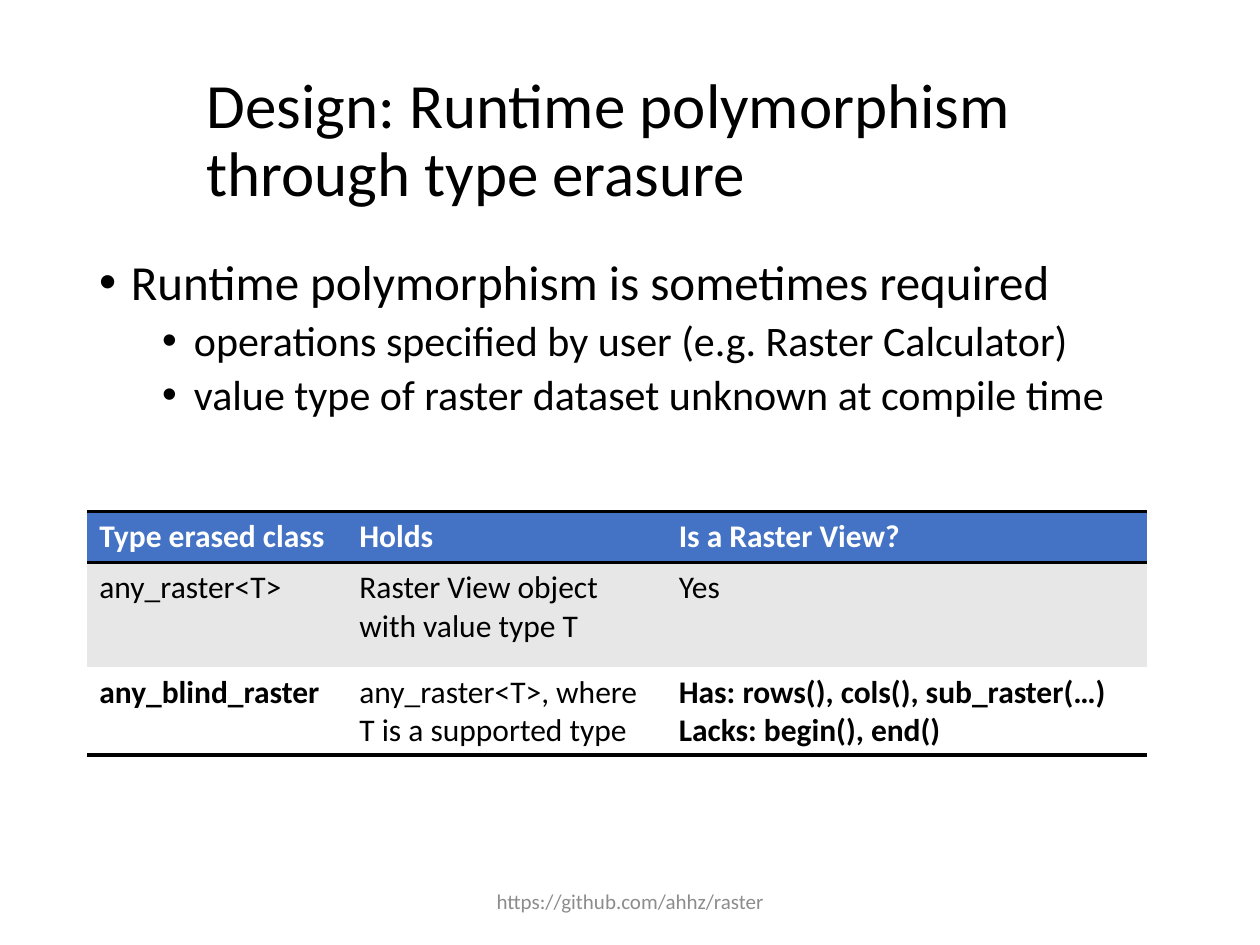
from lxml.etree import SubElement
from pptx import Presentation
from pptx.dml.color import RGBColor
from pptx.enum.text import MSO_ANCHOR, PP_ALIGN
from pptx.oxml import parse_xml
from pptx.oxml.ns import nsdecls, qn
from pptx.util import Cm, Pt

BLACK = RGBColor(0x00, 0x00, 0x00)
WHITE = RGBColor(0xFF, 0xFF, 0xFF)
BLUE = RGBColor(0x44, 0x72, 0xC4)
BAND = RGBColor(0xE7, 0xE7, 0xE7)
GRAY = RGBColor(0x8C, 0x8C, 0x8C)


class SlideBuilder:
    font_name = "Calibri"
    rule_width = Pt(2)

    def __init__(self, slide):
        self.slide = slide

    def style(self, paragraph, size, color=BLACK, bold=False):
        font = paragraph.font
        font.name = self.font_name
        font.size = Pt(size)
        font.bold = bold
        font.color.rgb = color

    def text_frame(self, left, top, width, height, anchor):
        shape = self.slide.shapes.add_textbox(Cm(left), Cm(top), Cm(width), Cm(height))
        frame = shape.text_frame
        frame.word_wrap = True
        frame.vertical_anchor = anchor
        return frame

    def text(self, text, box, size, color=BLACK, align=PP_ALIGN.LEFT, line_spacing=1.0):
        paragraph = self.text_frame(*box, MSO_ANCHOR.MIDDLE).paragraphs[0]
        paragraph.text = text
        paragraph.alignment = align
        paragraph.line_spacing = line_spacing
        self.style(paragraph, size, color)

    def bullets(self, items, box):
        frame = self.text_frame(*box, MSO_ANCHOR.TOP)
        for index, (level, text) in enumerate(items):
            paragraph = frame.paragraphs[0] if index == 0 else frame.add_paragraph()
            paragraph.text = text
            paragraph.level = level
            paragraph.line_spacing = 0.9
            paragraph.space_before = Pt(5 if index else 0)
            properties = paragraph._p.get_or_add_pPr()
            properties.set("marL", str(Cm(0.64 + 1.27 * level)))
            properties.set("indent", str(Cm(-0.64)))
            SubElement(properties, qn("a:buFont"), typeface="Arial")
            SubElement(properties, qn("a:buChar"), char="•")
            self.style(paragraph, 28 - 4 * level)

    def borders(self, cell, top, bottom):
        properties = cell._tc.get_or_add_tcPr()
        sides = {"lnL": False, "lnR": False, "lnT": top, "lnB": bottom}
        for position, (side, visible) in enumerate(sides.items()):
            paint = (f'<a:solidFill><a:srgbClr val="{BLACK}"/></a:solidFill>'
                     if visible else "<a:noFill/>")
            width = self.rule_width if visible else 0
            line = parse_xml(f'<a:{side} {nsdecls("a")} w="{width}">{paint}</a:{side}>')
            properties.insert(position, line)

    def table(self, rows, fills, rules, bold_cells, left, top, widths, heights):
        table = self.slide.shapes.add_table(
            len(rows), len(widths), Cm(left), Cm(top), Cm(sum(widths)), Cm(sum(heights))
        ).table
        for column, width in zip(table.columns, widths):
            column.width = Cm(width)
        for row, height in zip(table.rows, heights):
            row.height = Cm(height)
        for row_index, texts in enumerate(rows):
            color = WHITE if row_index == 0 else BLACK
            for column_index, text in enumerate(texts):
                cell = table.cell(row_index, column_index)
                cell.text = text
                cell.fill.solid()
                cell.fill.fore_color.rgb = fills[row_index]
                self.borders(cell, rules[row_index], rules[row_index + 1])
                bold = (row_index, column_index) in bold_cells
                for paragraph in cell.text_frame.paragraphs:
                    self.style(paragraph, 18, color, bold)


def main():
    presentation = Presentation()
    presentation.slide_width = Cm(25.4)
    presentation.slide_height = Cm(19.05)
    builder = SlideBuilder(presentation.slides.add_slide(presentation.slide_layouts[6]))

    # Title
    builder.text("Design: Runtime polymorphism through type erasure",
                 (3.91, 1.02, 19.74, 3.68), 36, line_spacing=0.9)

    # Motivation
    builder.bullets([
        (0, "Runtime polymorphism is sometimes required"),
        (1, "operations specified by user (e.g. Raster Calculator)"),
        (1, "value type of raster dataset unknown at compile time"),
    ], (1.75, 5.08, 21.9, 3.99))

    # Type-erased classes
    builder.table(
        rows=[
            ("Type erased class", "Holds", "Is a Raster View?"),
            ("any_raster<T>", "Raster View object with value type T", "Yes"),
            ("any_blind_raster", "any_raster<T>, where T is a supported type",
             "Has: rows(), cols(), sub_raster(…)\nLacks: begin(), end()"),
        ],
        fills=[BLUE, BAND, WHITE],
        rules=[True, True, False, True],
        bold_cells={(0, 0), (0, 1), (0, 2), (2, 0), (2, 2)},
        left=1.75, top=10.31,
        widths=[5.24, 6.44, 9.7], heights=[1.03, 2.1, 1.78],
    )

    # Footer
    builder.text("https://github.com/ahhz/raster", (8.41, 17.65, 8.59, 1.02),
                 12, GRAY, PP_ALIGN.CENTER)

    presentation.save("out.pptx")


if __name__ == "__main__":
    main()
